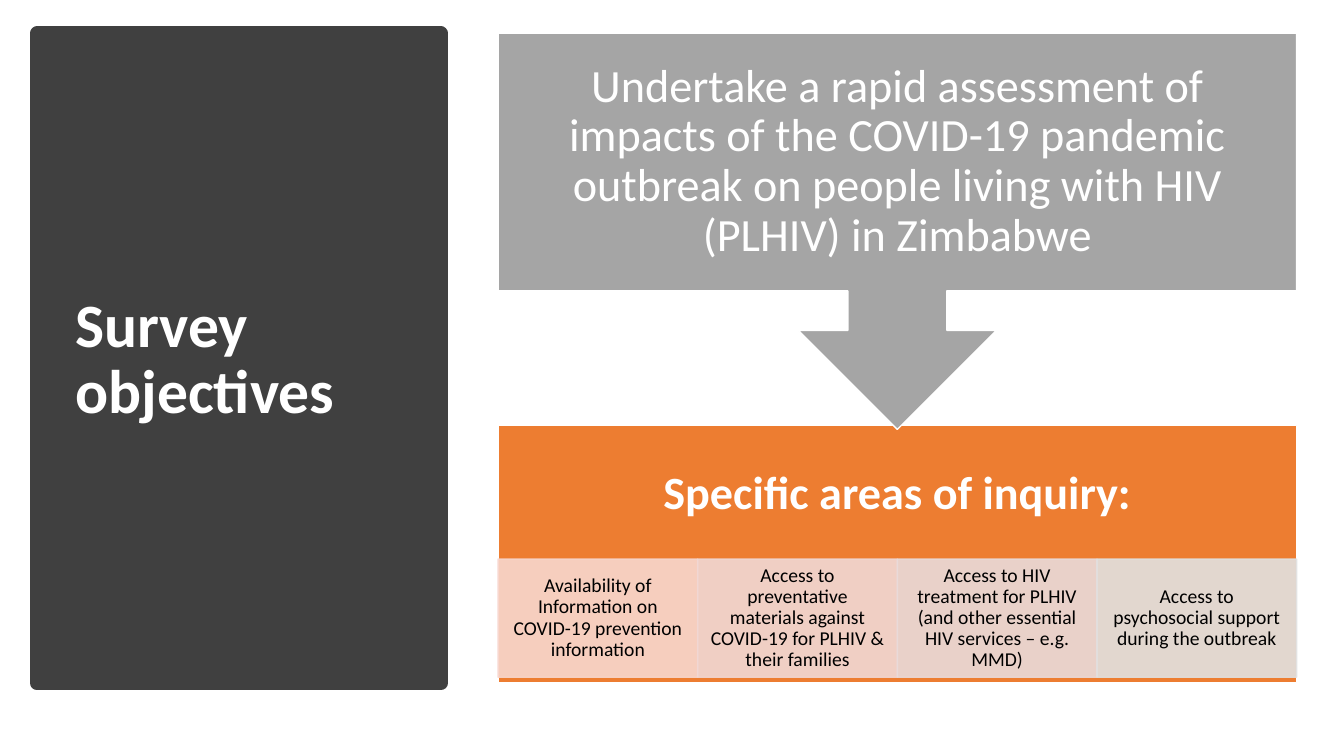
from pptx import Presentation
from pptx.dml.color import RGBColor as RGB
from pptx.enum.shapes import MSO_SHAPE as SHAPE
from pptx.enum.text import MSO_ANCHOR as ANCHOR, PP_ALIGN as ALIGN
from pptx.oxml.ns import qn
from pptx.util import Inches, Pt
from lxml.etree import SubElement

WHITE = RGB(0xFF, 0xFF, 0xFF)
BLACK = RGB(0, 0, 0)
DARK = RGB(0x40, 0x40, 0x40)
GREY = RGB(0xA5, 0xA5, 0xA5)
ORANGE = RGB(0xED, 0x7D, 0x31)
ROSE = RGB(0xF8, 0xD7, 0xCE)
BLUSH = RGB(0xF1, 0xD8, 0xD4)
MAUVE = RGB(0xE9, 0xDB, 0xDA)
PALE = RGB(0xE1, 0xE1, 0xE1)

GOAL = ("Undertake a rapid assessment of impacts of the COVID-19 pandemic "
        "outbreak on people living with HIV (PLHIV) in Zimbabwe")
AREAS = [
    ("Availability of Information on COVID-19 prevention information", ROSE),
    ("Access to preventative materials against COVID-19 for PLHIV & their families", BLUSH),
    ("Access to HIV treatment for PLHIV (and other essential HIV services – e.g. MMD)", MAUVE),
    ("Access to psychosocial support during the outbreak", PALE),
]


def add_box(slide, box, fill, line, width=1, kind=SHAPE.RECTANGLE, alpha=None):
    shape = slide.shapes.add_shape(kind, *map(Inches, box))
    shape.shadow.inherit = False
    shape.fill.solid()
    shape.fill.fore_color.rgb = fill
    shape.line.color.rgb = line
    shape.line.width = Pt(width)
    if alpha:
        for tint in shape._element.spPr.iter(qn("a:srgbClr")):
            SubElement(tint, qn("a:alpha"), val=str(alpha * 1000))
    return shape


def add_text(slide, box, text, pads, align=ALIGN.CENTER, **font):
    frame = slide.shapes.add_textbox(*map(Inches, box)).text_frame
    frame.word_wrap = True
    frame.vertical_anchor = ANCHOR.MIDDLE
    for side, pad in zip(("left", "top", "right", "bottom"), pads * 2):
        setattr(frame, "margin_" + side, Inches(pad))
    par = frame.paragraphs[0]
    par.alignment = align
    par.line_spacing = 0.9
    run = par.add_run()
    run.text = text
    color = font.pop("color", WHITE)
    for name, value in {"name": "Calibri", **font}.items():
        setattr(run.font, name, value)
    run.font.color.rgb = color


def draw_title(slide, box):
    left, top, width, height = box
    add_box(slide, box, DARK, DARK, 10)
    inner = (left + 0.07 * width, top + 0.37, 0.865 * width, height - 0.7)
    add_text(slide, inner, "Survey objectives", (0.1, 0.05), ALIGN.LEFT,
             size=Pt(44), bold=True)


def draw_areas(slide, box):
    left, top, width, height = box
    add_box(slide, box, ORANGE, WHITE)
    add_text(slide, (left, top, width, 0.54 * height), "Specific areas of inquiry:",
             (0.26, 0.26), size=Pt(33), bold=True)
    col = width / len(AREAS)
    for i, (text, fill) in enumerate(AREAS):
        cell = (left + i * col, top + 0.52 * height, col, 0.46 * height)
        add_box(slide, cell, fill, fill, alpha=90)
        add_text(slide, cell, text, (0.11, 0.02), size=Pt(14), color=BLACK)


def draw_goal(slide, box):
    left, top, width, height = box
    share = 0.65
    arrow = add_box(slide, box, GREY, WHITE, kind=SHAPE.UP_ARROW_CALLOUT)
    arrow.rotation = 180
    arrow.adjustments[3] = share
    add_text(slide, (left, top, width, share * height), GOAL, (0.26, 0.26), size=Pt(33))


def main():
    deck = Presentation()
    deck.slide_width, deck.slide_height = Inches(13.33), Inches(7.5)
    slide = deck.slides.add_slide(deck.slide_layouts[6])
    draw_title(slide, (0.37, 0.33, 4, 6.45))
    draw_areas(slide, (4.94, 4.22, 7.92, 2.55))
    draw_goal(slide, (4.94, 0.33, 7.92, 3.93))
    deck.save("out.pptx")


if __name__ == "__main__":
    main()
